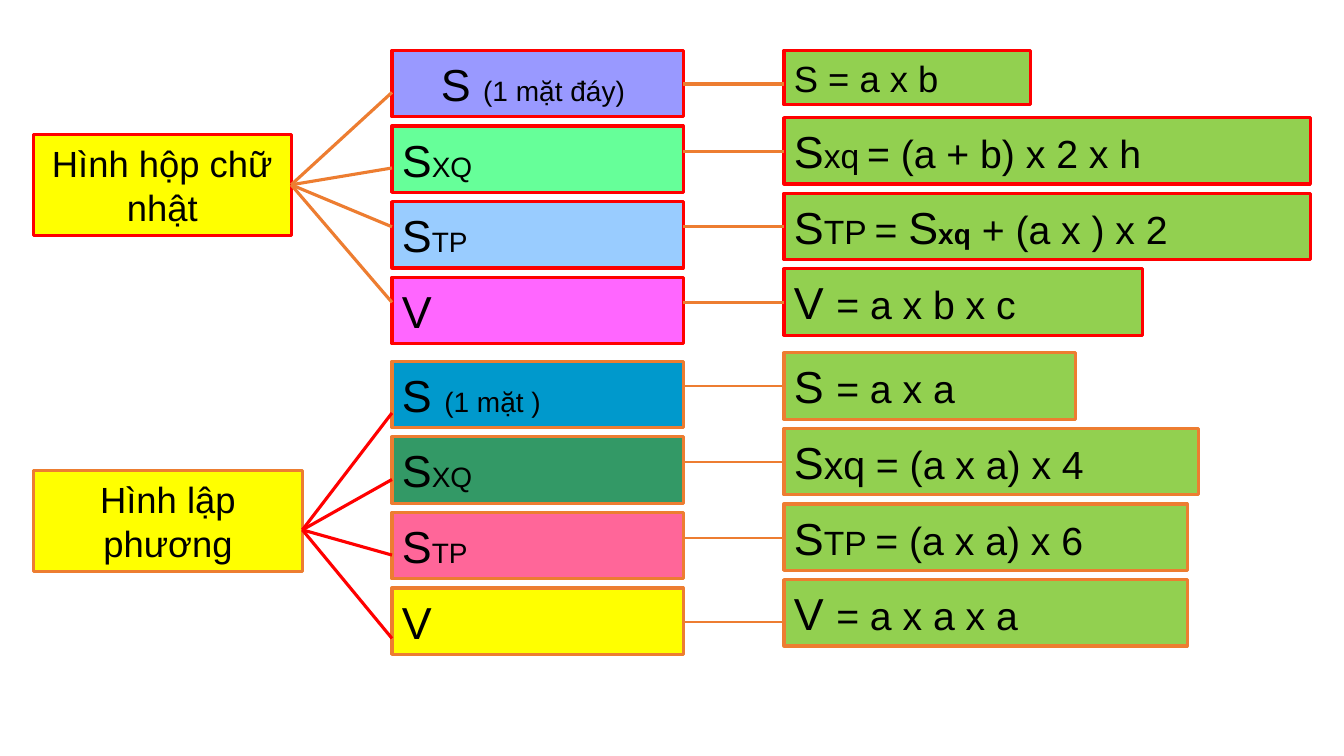
from pptx import Presentation
from pptx.dml.color import RGBColor
from pptx.enum.shapes import MSO_CONNECTOR, MSO_SHAPE
from pptx.enum.text import MSO_ANCHOR, PP_ALIGN
from pptx.util import Emu, Pt
from lxml import etree

PX = 6350  # 144 px to the inch
RED, ORANGE, YELLOW, GREEN = "FF0000", "ED7D31", "FFFF00", "92D050"
PART_X, PART_W, ROW_H, ROW_STEP = 512, 416, 95, 108
FORMULA_X = 1072
A_NS = "http://schemas.openxmlformats.org/drawingml/2006/main"


def px(n):
    return Emu(n * PX)


def color(hex_code):
    return RGBColor.from_string(hex_code)


def add_box(slide, x, y, w, h, fill, line, runs, align=PP_ALIGN.LEFT):
    """Each run is (text, size) or (text, size, bold)."""
    sp = slide.shapes.add_shape(MSO_SHAPE.RECTANGLE, px(x), px(y), px(w), px(h))
    sp.shadow.inherit = False
    sp.fill.solid()
    sp.fill.fore_color.rgb = color(fill)
    sp.line.color.rgb = color(line)
    sp.line.width = Pt(2.25)
    tf = sp.text_frame
    tf.word_wrap = True
    tf.vertical_anchor = MSO_ANCHOR.MIDDLE
    p = tf.paragraphs[0]
    p.alignment = align
    for text, size, *bold in runs:
        r = p.add_run()
        r.text = text
        r.font.name = "Arial"
        r.font.size = Pt(size)
        r.font.bold = bool(bold)
        r.font.color.rgb = color("000000")


def add_line(slide, x1, y1, x2, y2, line, width=2.25):
    cx = slide.shapes.add_connector(MSO_CONNECTOR.STRAIGHT, px(x1), px(y1), px(x2), px(y2))
    cx.line.color.rgb = color(line)
    cx.line.width = Pt(width)
    etree.SubElement(cx._element.spPr, f"{{{A_NS}}}effectLst")


def add_solid(slide, x, y, title, parts, formulas, border, fan, link_width):
    """A solid's name, its quantities and their formulas, from the corner x, y."""
    # Name of the solid
    name, name_y, name_w, hub_y = title
    add_box(slide, x, y + name_y, name_w, 144, YELLOW, border, [(name, 26)], PP_ALIGN.CENTER)

    # Quantities
    parts_y, rows = parts
    for i, (fill, runs, align) in enumerate(rows):
        add_box(slide, x + PART_X, y + parts_y + i * ROW_STEP, PART_W, ROW_H,
                fill, border, runs, align)

    # Formulas, each with its link
    for top, link_y, w, h, runs in formulas:
        add_box(slide, x + FORMULA_X, y + top, w, h, GREEN, border, runs)
        add_line(slide, x + PART_X + PART_W, y + link_y, x + FORMULA_X, y + link_y,
                 ORANGE, link_width)

    # Fan from the name to the quantities
    fan_color, ends = fan
    for end in ends:
        add_line(slide, x + name_w, y + hub_y, x + PART_X, y + end, fan_color)


def main():
    prs = Presentation()
    prs.slide_width, prs.slide_height = px(1920), px(1080)
    slide = prs.slides.add_slide(prs.slide_layouts[6])
    left, center = PP_ALIGN.LEFT, PP_ALIGN.CENTER
    lateral, total, volume = [("S", 32), ("XQ", 20)], [("S", 32), ("TP", 20)], [("V", 32)]

    # Cuboid
    add_solid(
        slide, 48, 72, ("Hình hộp chữ nhật", 120, 368, 192),
        (0, [("9999FF", [("S ", 32), ("(1 mặt đáy)", 20), (" ", 24)], center),
             ("66FF99", lateral, left),
             ("99CCFF", total, left),
             ("FF66FF", volume, left)]),
        [(0, 48, 352, 78, [("S = a x b", 26)]),
         (96, 144, 752, ROW_H, [("S", 32), ("xq", 24), (" ", 20), ("= (a + b) x 2 x h", 28)]),
         (204, 252, 752, ROW_H, [("S", 32), ("TP", 24), (" ", 20), ("= ", 28), ("S", 32),
                                 ("xq", 20, True), (" + (a x ) x 2", 28)]),
         (312, 360, 512, ROW_H, [("V ", 32), ("= a x b x c", 28)])],
        RED, (ORANGE, [60, 168, 252, 360]), 2.25)

    # Cube
    add_solid(
        slide, 48, 504, ("Hình lập phương", 168, 384, 253),
        (12, [("0099CC", [("S ", 32), ("(1 mặt )", 20), (" ", 24)], left),
              ("339966", lateral, left),
              ("FF6699", total, left),
              (YELLOW, volume, left)]),
        [(0, 48, 416, ROW_H, [("S ", 32), ("= a x a", 28)]),
         (108, 156, 592, ROW_H, [("S", 32), ("xq = (a x a) x 4", 28)]),
         (216, 264, 576, ROW_H, [("S", 32), ("TP ", 24), ("= (a x a) x 6", 28)]),
         (324, 384, 576, ROW_H, [("V ", 32), ("= a x a x a", 28)])],
        ORANGE, (RED, [86, 181, 289, 408]), 1.5)

    prs.save("out.pptx")


if __name__ == "__main__":
    main()
